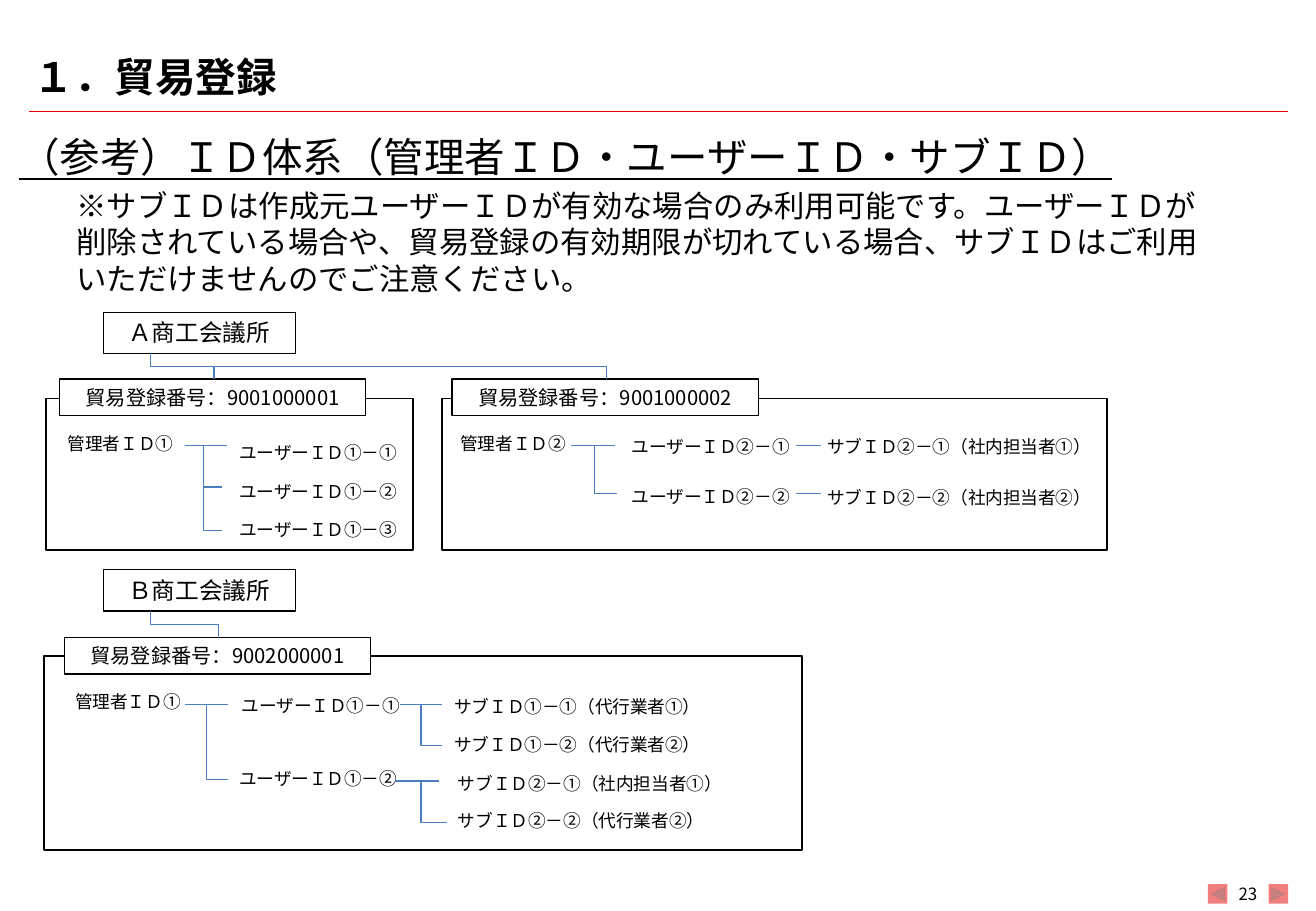
from dataclasses import dataclass

from lxml import etree
from pptx import Presentation
from pptx import util as u
from pptx.dml import color
from pptx.enum import shapes, text
from pptx.oxml import ns

PX = 9144
KIND = shapes.MSO_SHAPE
LINK = shapes.MSO_CONNECTOR


@dataclass(frozen=True)
class Theme:
    """Colours, type sizes and font of the deck."""
    ink: str = "000000"
    paper: str = "FFFFFF"
    red: str = "E60000"
    blue: str = "4B7EBC"
    font: str = "Noto Sans CJK JP"
    title: float = 24
    note: float = 18
    chamber: float = 14
    tab: float = 12
    label: float = 10.5
    page: float = 10


LOOK = Theme()
WIDTHS = (118, 181, 265)

PANELS = [
    dict(box=(38, 328, 302, 125), tab=(11, -16), number="9001000001",
         labels=([(8, 23, "管理者ＩＤ①")],
                 [(149, 31, "ユーザーＩＤ①－①"), (149, 63, "ユーザーＩＤ①－②"),
                  (149, 94, "ユーザーＩＤ①－③")]),
         forks=[(114, 39, [(149, 39), (145, 73), (145, 109)])]),
    dict(box=(364, 328, 547, 125), tab=(8, -16), number="9001000002",
         labels=([(5, 23, "管理者ＩＤ②")],
                 [(146, 26, "ユーザーＩＤ②－①"), (146, 67, "ユーザーＩＤ②－②")],
                 [(307, 26, "サブＩＤ②－①（社内担当者①）"),
                  (307, 68, "サブＩＤ②－②（社内担当者②）")]),
         forks=[(106, 39, [(142, 39), (144, 78)]),
                (291, 39, [(312, 39)]), (291, 78, [(312, 78)])]),
    dict(box=(36, 540, 624, 160), tab=(17, -15), number="9002000001",
         labels=([(16, 24, "管理者ＩＤ①")],
                 [(153, 27, "ユーザーＩＤ①－①"), (151, 87, "ユーザーＩＤ①－②")],
                 [(328, 28, "サブＩＤ①－①（代行業者①）"),
                  (328, 59, "サブＩＤ①－②（代行業者②）"),
                  (331, 91, "サブＩＤ②－①（社内担当者①）"),
                  (331, 122, "サブＩＤ②－②（代行業者②）")]),
         forks=[(116, 40, [(152, 40), (152, 102)]),
                (293, 40, [(328, 40), (328, 74)]),
                (289, 103, [(325, 103), (332, 137)])]),
]

CHAMBERS = [
    dict(box=(85, 257, 158, 34), name="Ａ商工会議所", ends=[(91, 55), (414, 55)]),
    dict(box=(85, 469, 158, 34), name="Ｂ商工会議所", ends=[(95, 56)]),
]


def px(*nums):
    """Turn px lengths into EMU."""
    return [u.Emu(round(n * PX)) for n in nums]


def rgb(code):
    """Give the colour of a hex code."""
    return color.RGBColor.from_string(code)


def write(shape, words, size, align=text.PP_ALIGN.LEFT,
          anchor=text.MSO_ANCHOR.TOP, **style):
    """Put one styled run into a shape."""
    frame = shape.text_frame
    frame.word_wrap = True
    frame.vertical_anchor = anchor
    para = frame.paragraphs[0]
    para.alignment = align
    run = para.add_run()
    run.text = words
    font = run.font
    font.name, font.size = LOOK.font, u.Pt(size)
    font.color.rgb = rgb(LOOK.ink)
    for key, val in style.items():
        setattr(font, key, val)
    props = run._r.get_or_add_rPr()
    etree.SubElement(props, ns.qn("a:ea")).set("typeface", LOOK.font)
    return frame


def label(slide, box, words, size, **style):
    """Add a plain text box."""
    return write(slide.shapes.add_textbox(*px(*box)), words, size, **style)


def frame(slide, box, width, fill=None):
    """Add an outlined rectangle."""
    rect = slide.shapes.add_shape(KIND.RECTANGLE, *px(*box))
    rect.shadow.inherit = False
    rect.line.color.rgb = rgb(LOOK.ink)
    rect.line.width = u.Pt(width)
    if fill:
        rect.fill.solid()
        rect.fill.fore_color.rgb = rgb(fill)
    else:
        rect.fill.background()
    return rect


def wire(slide, kind, ends, tint=LOOK.blue, width=0.75):
    """Add a connector without a shadow."""
    line = slide.shapes.add_connector(kind, *px(*ends))
    line.line.color.rgb = rgb(tint)
    line.line.width = u.Pt(width)
    etree.SubElement(line._element.spPr, ns.qn("a:effectLst"))
    return line


def drop(slide, x, y, end_x, end_y):
    """Add an elbow that leaves downward and arrives downward."""
    wide, high = end_x - x, end_y - y
    mid_x, mid_y = (x + end_x) / 2, (y + end_y) / 2
    line = wire(slide, LINK.ELBOW, (mid_x - high / 2, mid_y - wide / 2,
                                    mid_x + high / 2, mid_y + wide / 2))
    xfrm = line._element.spPr.find(ns.qn("a:xfrm"))
    xfrm.set("rot", "16200000")
    xfrm.set("flipH", "1")


def header(slide, box):
    """Place the title, its rule, the heading and the note."""
    x, y, w, h = box
    label(slide, (x + 18, y + 33, w - 56, 59), "１．貿易登録", LOOK.title,
          anchor=text.MSO_ANCHOR.MIDDLE, bold=True)
    wire(slide, LINK.STRAIGHT, (x + 24, y + 92, x + 1060, y + 92), LOOK.red, 0.25)
    label(slide, (x + 6, y + 104, 945, 51),
          "（参考）ＩＤ体系（管理者ＩＤ・ユーザーＩＤ・サブＩＤ）", LOOK.title,
          underline=True)
    label(slide, (x + 53, y + 149, 945, h - 149),
          "※サブＩＤは作成元ユーザーＩＤが有効な場合のみ利用可能です。"
          "ユーザーＩＤが削除されている場合や、貿易登録の有効期限が切れている場合、"
          "サブＩＤはご利用いただけませんのでご注意ください。", LOOK.note)


def chamber(slide, box, name, ends):
    """Place a chamber and its links to the registrations below."""
    x, y, w, h = box
    write(frame(slide, box, 0.75), name, LOOK.chamber, text.PP_ALIGN.CENTER)
    for dx, dy in ends:
        drop(slide, x + 39, y + h, x + dx, y + dy)


def panel(slide, box, tab, number, labels, forks):
    """Place one registration with its tree of IDs."""
    x, y, w, h = box
    frame(slide, box, 1)
    head = frame(slide, (x + tab[0], y + tab[1], 252, 30), 0.75, LOOK.paper)
    write(head, "貿易登録番号：" + number, LOOK.tab, text.PP_ALIGN.CENTER)
    for wide, column in zip(WIDTHS, labels):
        for dx, dy, words in column:
            label(slide, (x + dx, y + dy, wide, 28), words, LOOK.label)
    for dx, dy, ends in forks:
        for to_x, to_y in ends:
            kind = LINK.STRAIGHT if to_y == dy else LINK.ELBOW
            wire(slide, kind, (x + dx, y + dy, x + to_x, y + to_y))


def footer(slide, box):
    """Place the page number between two paging buttons."""
    x, y, w, h = box
    kinds = (KIND.ACTION_BUTTON_BACK_OR_PREVIOUS, KIND.ACTION_BUTTON_FORWARD_OR_NEXT)
    for kind, left in zip(kinds, (x, x + w - h)):
        key = slide.shapes.add_shape(kind, *px(left, y, h, h))
        key.shadow.inherit = False
        key.fill.solid()
        key.fill.fore_color.rgb = rgb(LOOK.red)
        tint = key._element.spPr.find(".//" + ns.qn("a:srgbClr"))
        etree.SubElement(tint, ns.qn("a:alpha")).set("val", "50000")
        key.line.fill.background()
    area = label(slide, (x + h, y, w - 2 * h, h), "23", LOOK.page,
                 align=text.PP_ALIGN.CENTER, anchor=text.MSO_ANCHOR.MIDDLE)
    area.margin_left = area.margin_right = 0


def main():
    """Build the slide and save it."""
    deck = Presentation()
    deck.slide_width, deck.slide_height = px(1083, 750)
    slide = deck.slides.add_slide(deck.slide_layouts[6])
    header(slide, (0, 0, 1083, 250))
    for part in PANELS:
        panel(slide, **part)
    for part in CHAMBERS:
        chamber(slide, **part)
    footer(slide, (994, 728, 66, 16))
    deck.save("out.pptx")


if __name__ == "__main__":
    main()
